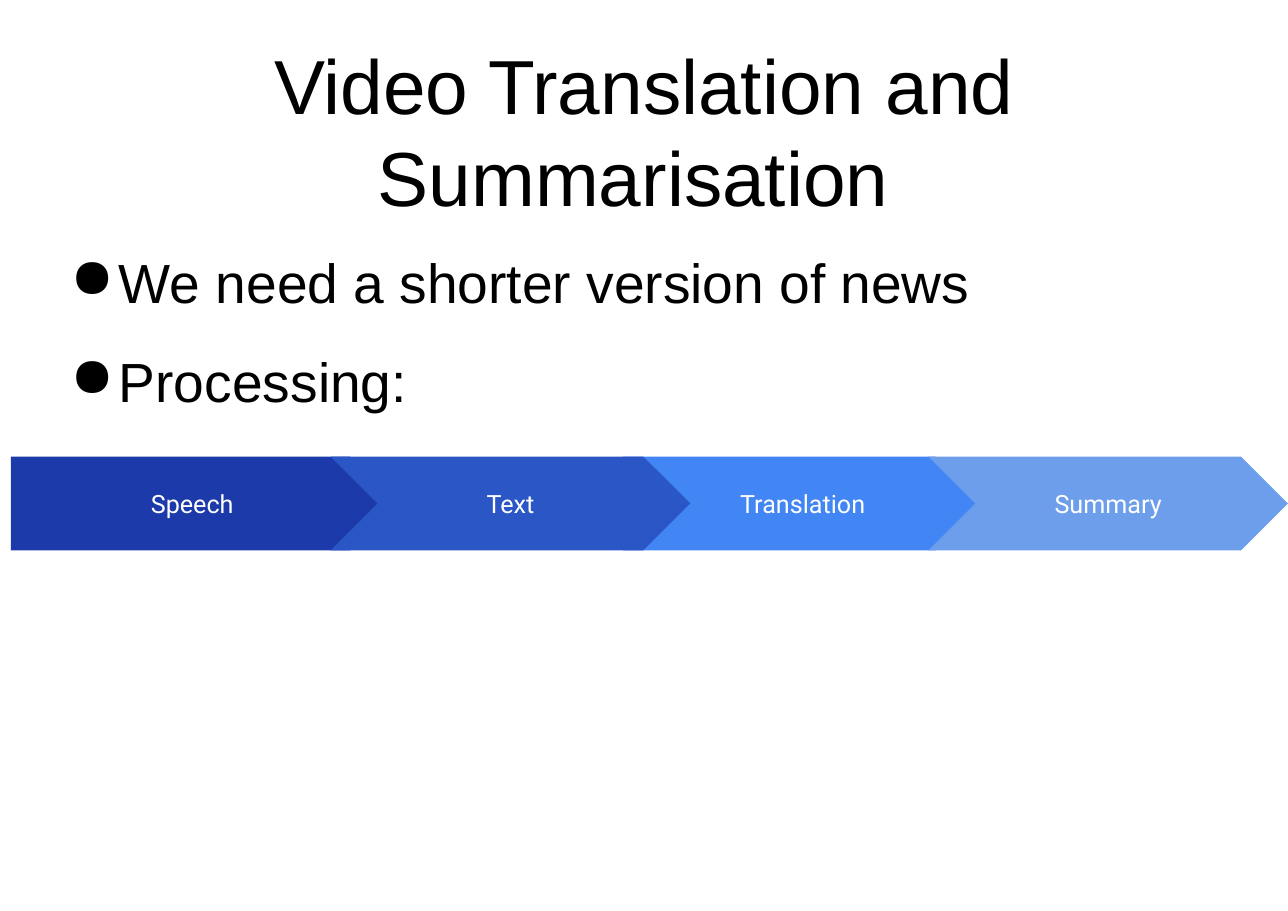
from lxml import etree
from pptx import Presentation
from pptx import util as u
from pptx.dml.color import RGBColor
from pptx.enum import shapes, text
from pptx.oxml import ns

PX = 9144
BLACK = RGBColor(0x00, 0x00, 0x00)
WHITE = RGBColor(0xFF, 0xFF, 0xFF)
NAVY = RGBColor(0x1C, 0x3A, 0xA9)
ROYAL = RGBColor(0x2A, 0x56, 0xC6)
AZURE = RGBColor(0x42, 0x85, 0xF4)
SKY = RGBColor(0x6D, 0x9E, 0xEB)

PENTAGON = shapes.MSO_SHAPE.PENTAGON
CHEVRON = shapes.MSO_SHAPE.CHEVRON
STEPS = [
    ("Translation", CHEVRON, 555, 326, AZURE),
    ("Speech", PENTAGON, 0, 350, NAVY),
    ("Text", CHEVRON, 290, 326, ROYAL),
    ("Summary", CHEVRON, 832, 326, SKY),
]


def scaled(*lengths):
    return [length * PX for length in lengths]


def prepare_frame(frame, margin, anchor):
    frame.word_wrap = True
    frame.vertical_anchor = anchor
    frame.margin_left = frame.margin_right = margin * PX
    frame.margin_top = frame.margin_bottom = margin * PX


def style_runs(paragraph, font_name, size, color):
    for run in paragraph.runs:
        run.font.name = font_name
        run.font.size = u.Pt(size)
        run.font.color.rgb = color


def add_bullet(paragraph, left, indent):
    properties = paragraph._p.get_or_add_pPr()
    properties.set("marL", str(left * PX))
    properties.set("indent", str(indent * PX))
    bullet_color = etree.SubElement(properties, ns.qn("a:buClr"))
    etree.SubElement(bullet_color, ns.qn("a:srgbClr"), val=str(BLACK))
    etree.SubElement(properties, ns.qn("a:buChar"), char="●")


def add_title(slide, left, top, width, height):
    title = slide.shapes.add_textbox(*scaled(left, top, width, height)).text_frame
    prepare_frame(title, 10, text.MSO_ANCHOR.MIDDLE)
    title.text = "Video Translation and Summarisation "
    heading = title.paragraphs[0]
    heading.alignment = text.PP_ALIGN.CENTER
    style_runs(heading, "Arial", 50, BLACK)


def add_points(slide, left, top, width, height):
    points = slide.shapes.add_textbox(*scaled(left, top, width, height)).text_frame
    prepare_frame(points, 10, text.MSO_ANCHOR.TOP)
    points.text = "We need a shorter version of news\nProcessing:"
    for point in points.paragraphs:
        add_bullet(point, 58, -44)
        point.line_spacing = 1.5
        style_runs(point, "Arial", 36, BLACK)


def add_pipeline(slide, left, top, height):
    for label, outline, offset, width, color in STEPS:
        step = slide.shapes.add_shape(
            outline, *scaled(left + offset, top, width, height))
        step.adjustments[0] = 0.5
        step.shadow.inherit = False
        step.fill.solid()
        step.fill.fore_color.rgb = color
        step.line.fill.background()
        prepare_frame(step.text_frame, 12, text.MSO_ANCHOR.MIDDLE)
        step.text_frame.text = label
        caption = step.text_frame.paragraphs[0]
        caption.alignment = text.PP_ALIGN.CENTER
        style_runs(caption, "Roboto", 16.4, WHITE)


def main():
    deck = Presentation()
    deck.slide_width, deck.slide_height = scaled(1168, 826)
    slide = deck.slides.add_slide(deck.slide_layouts[6])
    slide.background.fill.solid()
    slide.background.fill.fore_color.rgb = WHITE
    add_title(slide, 40, 72, 1088, 92)
    add_points(slide, 40, 185, 1088, 549)
    add_pipeline(slide, 10, 414, 85)
    deck.save("out.pptx")


if __name__ == "__main__":
    main()
